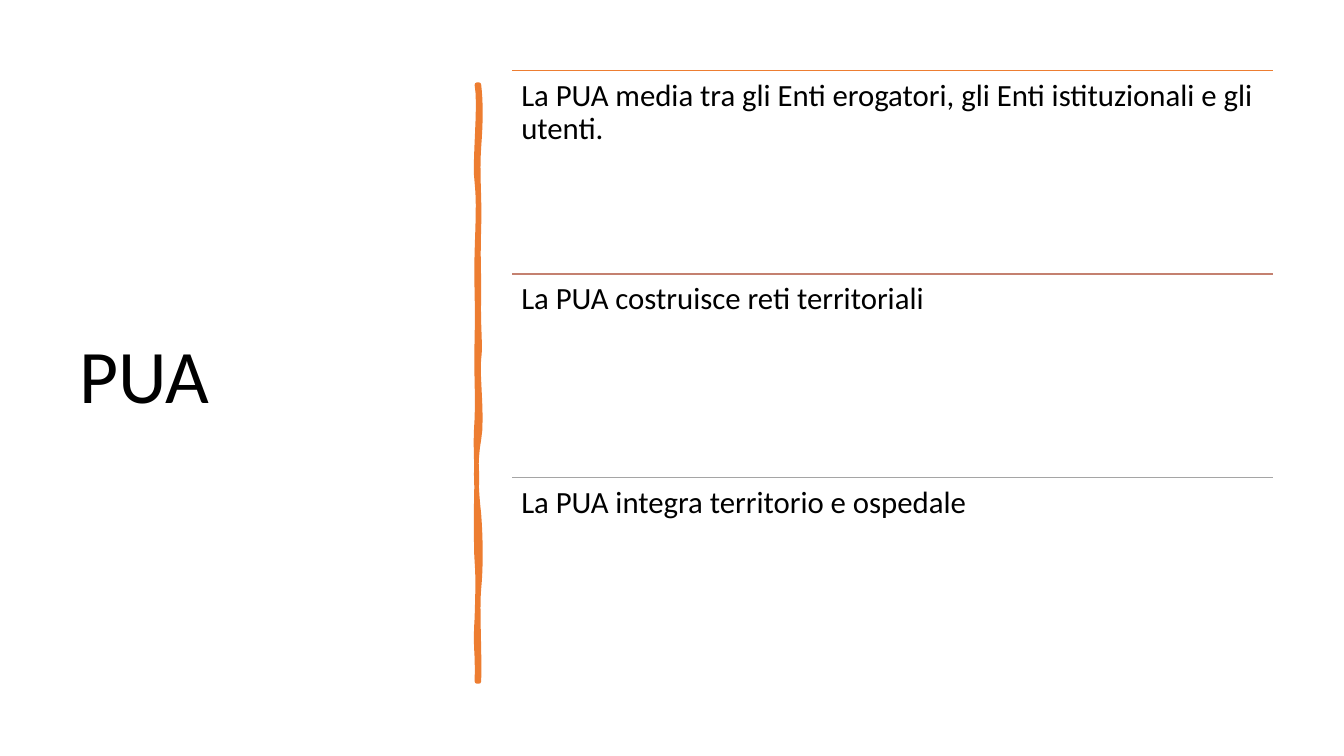
from dataclasses import dataclass

from lxml import etree
from pptx import Presentation
from pptx.dml.color import RGBColor
from pptx.enum.shapes import MSO_CONNECTOR
from pptx.enum.text import MSO_ANCHOR, PP_ALIGN
from pptx.oxml.ns import qn
from pptx.shapes.autoshape import Shape
from pptx.slide import Slide
from pptx.text.text import TextFrame
from pptx.util import Inches, Pt

STRAIGHT = MSO_CONNECTOR.STRAIGHT
TOP = MSO_ANCHOR.TOP
MIDDLE = MSO_ANCHOR.MIDDLE
LEFT = PP_ALIGN.LEFT

BLACK = RGBColor(0x00, 0x00, 0x00)
ORANGE = RGBColor(0xED, 0x7D, 0x31)
ROSE = RGBColor(0xC4, 0x81, 0x70)
GRAY = RGBColor(0xA5, 0xA5, 0xA5)
FONT = "Calibri"

LIST_LEFT, LIST_TOP, LIST_WIDTH, ROW_HEIGHT = 5.08, 0.7, 7.55, 2.02
STROKE_TOP = 0.84
STROKE_LEFT, STROKE_RIGHT = 4.73, 4.75
CURVE_STEPS = 8


@dataclass
class Item:
    text: str
    color: RGBColor


@dataclass
class Wave:
    """One cubic bend of the brush edge: two controls and the end height."""
    x1: float
    y1: float
    x2: float
    y2: float
    end_y: float


ITEMS = [
    Item("La PUA media tra gli Enti erogatori, gli Enti istituzionali e gli utenti.", ORANGE),
    Item("La PUA costruisce reti territoriali", ROSE),
    Item("La PUA integra territorio e ospedale", GRAY),
]

RIGHT_EDGE = [
    Wave(4.77, 1.02, 4.77, 1.19, 1.46),
    Wave(4.73, 1.73, 4.76, 1.95, 2.26),
    Wave(4.74, 2.57, 4.75, 2.62, 2.94),
    Wave(4.74, 3.25, 4.77, 3.42, 3.56),
    Wave(4.73, 3.7, 4.79, 4.14, 4.36),
    Wave(4.71, 4.57, 4.72, 4.84, 5.1),
    Wave(4.77, 5.36, 4.77, 5.64, 5.84),
    Wave(4.73, 6.03, 4.76, 6.5, 6.76),
]
LEFT_EDGE = [
    Wave(4.74, 6.46, 4.71, 6.44, 6.13),
    Wave(4.74, 5.83, 4.74, 5.7, 5.57),
    Wave(4.72, 5.44, 4.72, 4.95, 4.77),
    Wave(4.73, 4.59, 4.71, 4.45, 4.15),
    Wave(4.74, 3.86, 4.72, 3.73, 3.35),
    Wave(4.74, 2.98, 4.72, 2.81, 2.5),
    Wave(4.74, 2.18, 4.75, 2, 1.81),
    Wave(4.7, 1.63, 4.77, 1.04, STROKE_TOP),
]


def write_text(frame: TextFrame, text: str, size: float, anchor: MSO_ANCHOR, inset: float) -> None:
    frame_format = {
        "word_wrap": True,
        "vertical_anchor": anchor,
        "margin_left": Inches(inset),
        "margin_right": Inches(inset),
        "margin_top": Inches(inset),
        "margin_bottom": Inches(inset),
    }
    for name, value in frame_format.items():
        setattr(frame, name, value)
    paragraph = frame.paragraphs[0]
    paragraph.alignment = LEFT
    paragraph.line_spacing = 0.9
    run = paragraph.add_run()
    run.text = text
    for name, value in {"name": FONT, "size": Pt(size)}.items():
        setattr(run.font, name, value)
    run.font.color.rgb = BLACK


def edge_points(x: float, start_y: float, waves: list[Wave]) -> list[tuple[int, int]]:
    points = []
    for wave in waves:
        for step in range(1, CURVE_STEPS + 1):
            t = step / CURVE_STEPS
            weights = ((1 - t) ** 3, 3 * t * (1 - t) ** 2, 3 * t * t * (1 - t), t ** 3)
            xs = (x, wave.x1, wave.x2, x)
            ys = (start_y, wave.y1, wave.y2, wave.end_y)
            points.append((
                Inches(sum(w * v for w, v in zip(weights, xs))),
                Inches(sum(w * v for w, v in zip(weights, ys))),
            ))
        start_y = wave.end_y
    return points


def draw_brush_stroke(slide: Slide) -> Shape:
    bottom = RIGHT_EDGE[-1].end_y
    points = edge_points(STROKE_RIGHT, STROKE_TOP, RIGHT_EDGE)
    points.append((Inches(STROKE_LEFT), Inches(bottom)))
    points += edge_points(STROKE_LEFT, bottom, LEFT_EDGE)
    builder = slide.shapes.build_freeform(Inches(STROKE_RIGHT), Inches(STROKE_TOP))
    builder.add_line_segments(points, close=True)
    stroke = builder.convert_to_shape()
    stroke.shadow.inherit = False
    stroke.fill.solid()
    stroke.fill.fore_color.rgb = ORANGE
    stroke.line.color.rgb = ORANGE
    stroke.line.width = Pt(3.25)
    etree.SubElement(stroke.line._get_or_add_ln(), qn("a:round"))
    return stroke


def draw_item(slide: Slide, item: Item, top: float) -> None:
    left, right = Inches(LIST_LEFT), Inches(LIST_LEFT + LIST_WIDTH)
    rule = slide.shapes.add_connector(STRAIGHT, left, Inches(top), right, Inches(top))
    rule.line.color.rgb = item.color
    rule.line.width = Pt(1)
    etree.SubElement(rule._element.spPr, qn("a:effectLst"))
    box = slide.shapes.add_textbox(left, Inches(top), Inches(LIST_WIDTH), Inches(ROW_HEIGHT))
    write_text(box.text_frame, item.text, 22, TOP, 0.09)


def main() -> None:
    presentation = Presentation()
    presentation.slide_width = Inches(13.33)
    presentation.slide_height = Inches(7.5)
    slide = presentation.slides.add_slide(presentation.slide_layouts[5])

    # Title
    title = slide.shapes.title
    place = {"left": 0.69, "top": 0.7, "width": 3.74, "height": 6.11}
    for name, value in place.items():
        setattr(title, name, Inches(value))
    write_text(title.text_frame, "PUA", 54, MIDDLE, 0.1)

    # Hand-drawn divider
    draw_brush_stroke(slide)

    # Ruled list
    for index, item in enumerate(ITEMS):
        draw_item(slide, item, LIST_TOP + index * ROW_HEIGHT)

    presentation.save("out.pptx")


if __name__ == "__main__":
    main()
